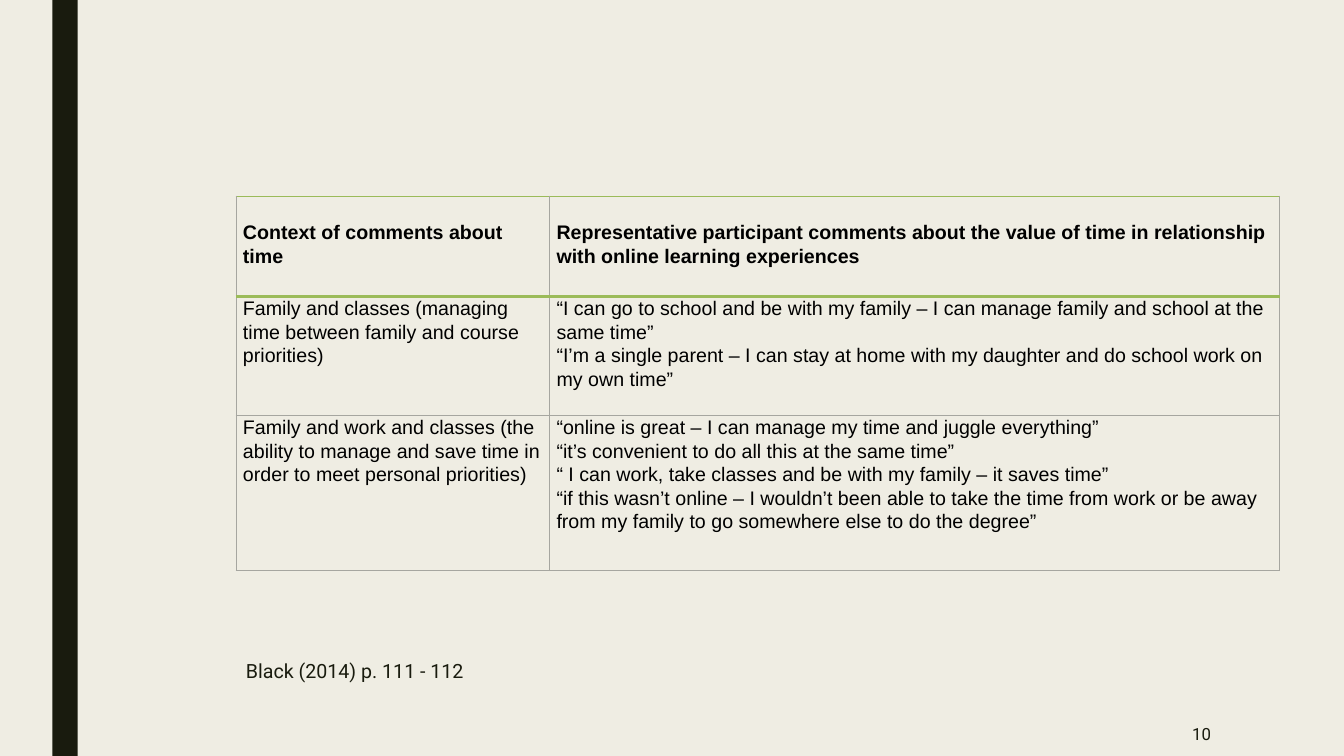
from lxml import etree
from pptx import Presentation
from pptx.dml.color import RGBColor
from pptx.enum.shapes import MSO_SHAPE
from pptx.enum.text import MSO_ANCHOR, PP_ALIGN
from pptx.oxml.ns import qn
from pptx.util import Inches, Pt

CREAM = RGBColor(0xEF, 0xED, 0xE3)
INK = RGBColor(0x19, 0x1B, 0x0E)
BLACK = RGBColor(0, 0, 0)
GREEN = RGBColor(0x9B, 0xBB, 0x59)
GREY = RGBColor(0xA6, 0xA6, 0xA0)

COLUMN_WIDTHS = (3.11, 7.24)
ROW_HEIGHTS = (0.99, 1.18, 1.54)
COMMENTS = (
    (["Context of comments about time"],
     ["Representative participant comments about the value of time in relationship "
      "with online learning experiences"]),
    (["Family and classes (managing time between family and course priorities)"],
     ["“I can go to school and be with my family – I can manage family and school at the same time”",
      "“I’m a single parent – I can stay at home with my daughter and do school work on my own time”"]),
    (["Family and work and classes (the ability to manage and save time in order to "
      "meet personal priorities)"],
     ["“online is great – I can manage my time and juggle everything”",
      "“it’s convenient to do all this at the same time”",
      "“ I can work, take classes and be with my family – it saves time”",
      "“if this wasn’t online – I wouldn’t been able to take the time from work or be away "
      "from my family to go somewhere else to do the degree”"]),
)


def set_borders(cell, top, bottom):
    """Each border is a (colour, points) pair; the sides are thin grey."""
    side = (GREY, 0.5)
    properties = cell._tc.get_or_add_tcPr()
    edges = (("a:lnL", side), ("a:lnR", side), ("a:lnT", top), ("a:lnB", bottom))
    for position, (tag, (color, points)) in enumerate(edges):
        line = etree.Element(qn(tag), w=str(Pt(points)))
        fill = etree.SubElement(line, qn("a:solidFill"))
        etree.SubElement(fill, qn("a:srgbClr"), val=str(color))
        properties.insert(position, line)


def fill_cell(cell, lines, is_header):
    cell.fill.background()
    cell.margin_left = cell.margin_right = Inches(0.07)
    cell.margin_top = 0
    cell.margin_bottom = Inches(0.05 if is_header else 0)
    cell.vertical_anchor = MSO_ANCHOR.MIDDLE if is_header else MSO_ANCHOR.TOP
    cell.text = "\n".join(lines)
    for paragraph in cell.text_frame.paragraphs:
        paragraph.line_spacing = 1.07
        font = paragraph.font
        font.name, font.size, font.bold = "Arial", Pt(14), is_header
        font.color.rgb = BLACK


def add_comment_table(slide, left, top):
    table = slide.shapes.add_table(
        len(ROW_HEIGHTS), len(COLUMN_WIDTHS), Inches(left), Inches(top),
        Inches(sum(COLUMN_WIDTHS)), Inches(sum(ROW_HEIGHTS))).table
    table.first_row = table.horz_banding = False
    for column, width in zip(table.columns, COLUMN_WIDTHS):
        column.width = Inches(width)
    # Horizontal rules from the top edge to the bottom edge
    rules = ((GREEN, 1), (GREEN, 2.25), (GREY, 0.5), (GREY, 0.5))
    for r, (row, height, contents) in enumerate(zip(table.rows, ROW_HEIGHTS, COMMENTS)):
        row.height = Inches(height)
        for cell, lines in zip(row.cells, contents):
            fill_cell(cell, lines, is_header=r == 0)
            set_borders(cell, rules[r], rules[r + 1])


def add_side_bar(slide, left, top, width, height):
    bar = slide.shapes.add_shape(MSO_SHAPE.RECTANGLE, Inches(left), Inches(top),
                                 Inches(width), Inches(height))
    bar.shadow.inherit = False
    bar.fill.solid()
    bar.fill.fore_color.rgb = INK
    bar.line.fill.background()


def add_footer_text(slide, text, size, align, left, top, width, height):
    frame = slide.shapes.add_textbox(Inches(left), Inches(top),
                                     Inches(width), Inches(height)).text_frame
    frame.word_wrap = True
    frame.vertical_anchor = MSO_ANCHOR.MIDDLE
    paragraph = frame.paragraphs[0]
    paragraph.text = text
    paragraph.alignment = align
    paragraph.font.name, paragraph.font.size = "Roboto", Pt(size)
    paragraph.font.color.rgb = INK


def main():
    deck = Presentation()
    deck.slide_width, deck.slide_height = Inches(13.33), Inches(7.5)
    slide = deck.slides.add_slide(deck.slide_layouts[6])
    slide.background.fill.solid()
    slide.background.fill.fore_color.rgb = CREAM

    add_side_bar(slide, 0.52, 0, 0.25, 7.5)
    add_comment_table(slide, 2.34, 1.95)
    # Citation and page number
    add_footer_text(slide, "Black (2014) p. 111 - 112", 14, PP_ALIGN.LEFT, 2.34, 6.43, 6.87, 0.44)
    add_footer_text(slide, "10", 12, PP_ALIGN.RIGHT, 10.36, 7.06, 1.75, 0.44)
    deck.save("out.pptx")


if __name__ == "__main__":
    main()
